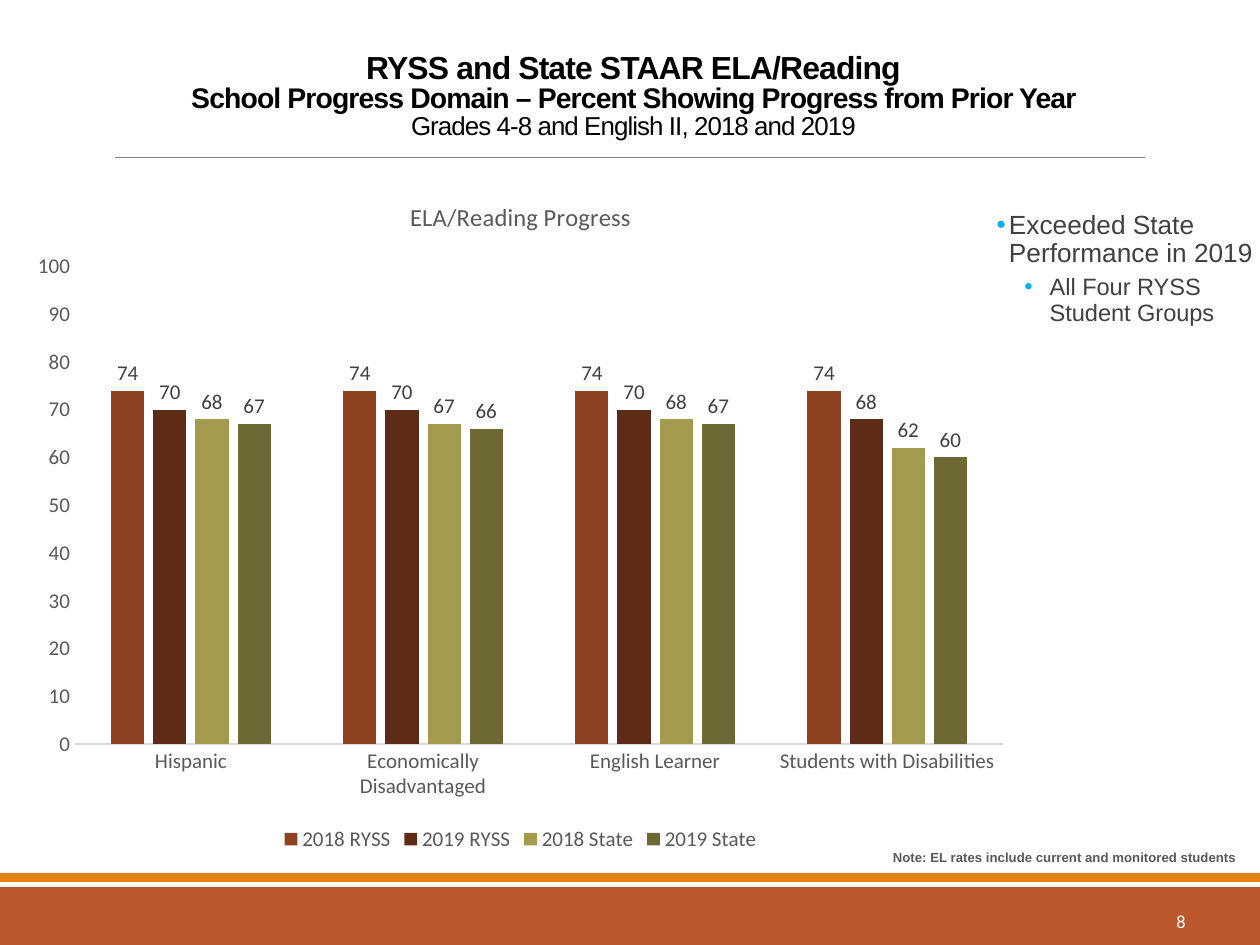
from copy import deepcopy
from lxml import etree
from pptx import Presentation
from pptx.chart.data import CategoryChartData
from pptx.dml.color import RGBColor
from pptx.enum.chart import XL_CHART_TYPE as ChartType, XL_LABEL_POSITION as LabelPos
from pptx.enum.chart import XL_LEGEND_POSITION as LegendPos, XL_TICK_MARK as Tick
from pptx.enum.shapes import MSO_CONNECTOR as Connector, MSO_SHAPE as Shape
from pptx.enum.text import MSO_ANCHOR as Anchor, MSO_AUTO_SIZE as AutoSize, PP_ALIGN as Align
from pptx.oxml.ns import qn
from pptx.util import Cm, Pt

# Content
TITLE = [  # text, size, bold
    ("RYSS and State STAAR ELA/Reading", 18.2, True),
    ("School Progress Domain – Percent Showing Progress from Prior Year", 16.2, True),
    ("Grades 4-8 and English II, 2018 and 2019", 14.8, False),
]
BULLETS = [  # text, level, size, left and hanging indent (cm), space before and after (pt)
    ("Exceeded State Performance in 2019", 0, 15, 0.25, 0.25, 12, 2),
    ("All Four RYSS Student Groups", 1, 13.5, 1.07, 0.51, 2, 4),
]
NOTE = "Note: EL rates include current and monitored students"
PAGE = "8"
CHART_TITLE = "ELA/Reading Progress"
GROUPS = ["Hispanic", "Economically Disadvantaged", "English Learner", "Students with Disabilities"]
SERIES = [  # name, values, colour
    ("2018 RYSS", (74, 74, 74, 74), "rust"),
    ("2019 RYSS", (70, 70, 70, 68), "brown"),
    ("2018 State", (68, 67, 68, 62), "olive"),
    ("2019 State", (67, 66, 67, 60), "moss"),
]
COLORS = {
    "rust": "8E4221", "brown": "5E2C16", "olive": "A39B4E", "moss": "6D6834",
    "footer": "BD582C", "stripe": "E48312", "rule": "808080", "axis": "D9D9D9",
    "black": "000000", "white": "FFFFFF", "text": "404040", "muted": "595959",
    "bullet": "00B0F0",
}
BANDS = [(17.88, 1.17, "footer"), (17.6, 0.18, "stripe")]  # top, height, colour

# Positions in cm: left, top, width, height
TITLE_BOX = (2.29, 0.79, 20.96, 2.18)
BODY_BOX = (20.09, 4.14, 5.38, 4.52)
CHART_BOX = (0.36, 3.53, 20.27, 13.74)
NOTE_BOX = (17.75, 16.99, 7.57, 0.58)
PAGE_BOX = (21.41, 18.06, 2.74, 1.02)


def rgb(name):
    return RGBColor.from_string(COLORS[name])


def set_all(obj, **values):
    for key, value in values.items():
        setattr(obj, key, value)


def style(font, size, color, name="Calibri", bold=False):
    set_all(font, size=Pt(size), name=name, bold=bold)
    font.color.rgb = rgb(color)


def place(sp, box):
    set_all(sp, **dict(zip(("left", "top", "width", "height"), map(Cm, box))))


def add_text(slide, box, text, align, **font):
    tf = slide.shapes.add_textbox(*map(Cm, box)).text_frame
    set_all(tf, word_wrap=True, vertical_anchor=Anchor.MIDDLE)
    p = tf.paragraphs[0]
    p.alignment = align
    r = p.add_run()
    r.text = text
    style(r.font, **font)
    return tf


def add_bands(slide, width):
    for top, height, color in BANDS:
        sp = slide.shapes.add_shape(Shape.RECTANGLE, 0, Cm(top), width, Cm(height))
        sp.shadow.inherit = False
        sp.fill.solid()
        sp.fill.fore_color.rgb = rgb(color)
        sp.line.fill.background()
    rule = slide.shapes.add_connector(Connector.STRAIGHT, Cm(2.31), Cm(3.17), Cm(23.09), Cm(3.17))
    rule.line.color.rgb = rgb("rule")
    rule.line.width = Pt(0.5)
    etree.SubElement(rule._element.spPr, qn("a:effectLst"))


def fill_title(sp):
    place(sp, TITLE_BOX)
    tf = sp.text_frame
    set_all(tf, auto_size=AutoSize.NONE, word_wrap=True, vertical_anchor=Anchor.BOTTOM)
    p = tf.paragraphs[0]
    set_all(p, alignment=Align.CENTER, line_spacing=0.85)
    for i, (text, size, bold) in enumerate(TITLE):
        if i:  # the break keeps the size of the line it ends
            p.add_line_break()
            p._p[-1].append(deepcopy(r._r.rPr))
        r = p.add_run()
        r.text = text
        style(r.font, size, "black", "Arial", bold)
        r._r.rPr.set("spc", "-50")


def fill_body(sp):
    place(sp, BODY_BOX)
    tf = sp.text_frame
    set_all(tf, auto_size=AutoSize.NONE, word_wrap=True, margin_left=0, margin_right=0)
    for i, (text, level, size, left, hang, before, after) in enumerate(BULLETS):
        p = tf.add_paragraph() if i else tf.paragraphs[0]
        set_all(p, level=level, line_spacing=0.9, space_before=Pt(before), space_after=Pt(after))
        r = p.add_run()
        r.text = text
        style(r.font, size, "text", "Arial")
        pPr = p._p.get_or_add_pPr()
        pPr.set("marL", str(Cm(left)))
        pPr.set("indent", str(-Cm(hang)))
        color = etree.SubElement(pPr, qn("a:buClr"))
        etree.SubElement(color, qn("a:srgbClr"), val=COLORS["bullet"])
        etree.SubElement(pPr, qn("a:buFont"), typeface="Arial")
        etree.SubElement(pPr, qn("a:buChar"), char="•")


def add_progress_chart(slide):
    data = CategoryChartData()
    data.categories = GROUPS
    for name, values, _ in SERIES:
        data.add_series(name, values)
    chart = slide.shapes.add_chart(ChartType.COLUMN_CLUSTERED, *map(Cm, CHART_BOX), data).chart
    style(chart.font, 12, "muted")

    # Title and legend
    chart.has_title = True
    tf = chart.chart_title.text_frame
    tf.text = CHART_TITLE
    style(tf.paragraphs[0].runs[0].font, 14, "muted")
    chart.chart_title.include_in_layout = False
    chart.has_legend = True
    set_all(chart.legend, position=LegendPos.BOTTOM, include_in_layout=False)
    style(chart.legend.font, 12, "muted")

    # Axes
    for axis in (chart.category_axis, chart.value_axis):
        set_all(axis, major_tick_mark=Tick.NONE, minor_tick_mark=Tick.NONE,
                has_major_gridlines=False)
        style(axis.tick_labels.font, 12, "muted")
    set_all(chart.value_axis, minimum_scale=0, maximum_scale=100, major_unit=10)
    chart.value_axis.format.line.fill.background()
    line = chart.category_axis.format.line
    line.color.rgb = rgb("axis")
    line.width = Pt(0.75)

    # Columns and their labels
    plot = chart.plots[0]
    set_all(plot, gap_width=219, overlap=-27, vary_by_categories=False)
    for series, (_, _, color) in zip(plot.series, SERIES):
        series.format.fill.solid()
        series.format.fill.fore_color.rgb = rgb(color)
        labels = series.data_labels
        set_all(labels, show_value=True, position=LabelPos.OUTSIDE_END)
        style(labels.font, 12, "text")


def main():
    prs = Presentation()
    set_all(prs, slide_width=Cm(25.4), slide_height=Cm(19.05))
    slide = prs.slides.add_slide(prs.slide_layouts[1])
    add_bands(slide, prs.slide_width)
    fill_title(slide.shapes.title)
    add_progress_chart(slide)
    fill_body(slide.placeholders[1])
    note = add_text(slide, NOTE_BOX, NOTE, Align.LEFT, size=7.5, color="muted", name="Arial", bold=True)
    note.margin_right = 0
    add_text(slide, PAGE_BOX, PAGE, Align.RIGHT, size=10.5, color="white")
    prs.save("out.pptx")


if __name__ == "__main__":
    main()
